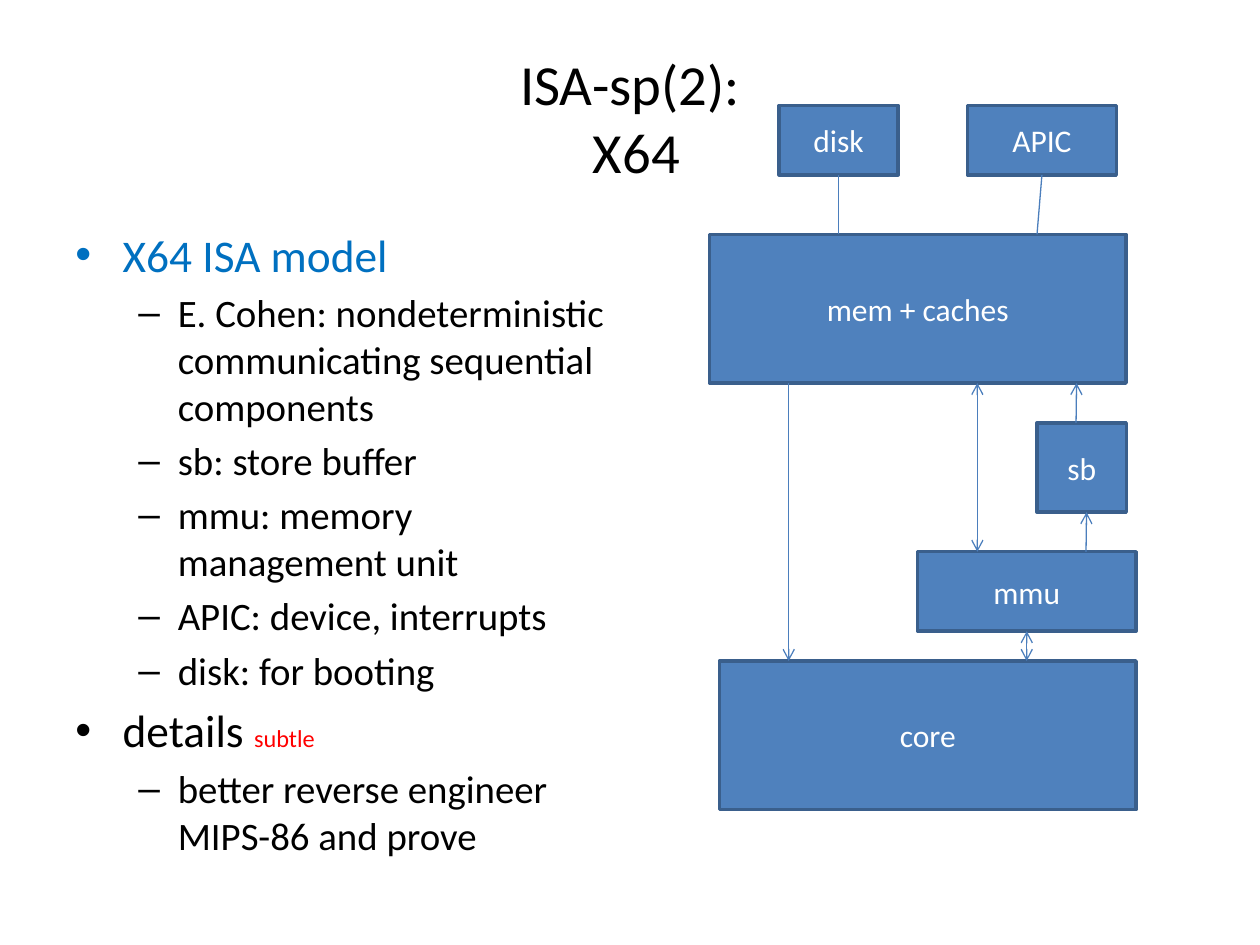
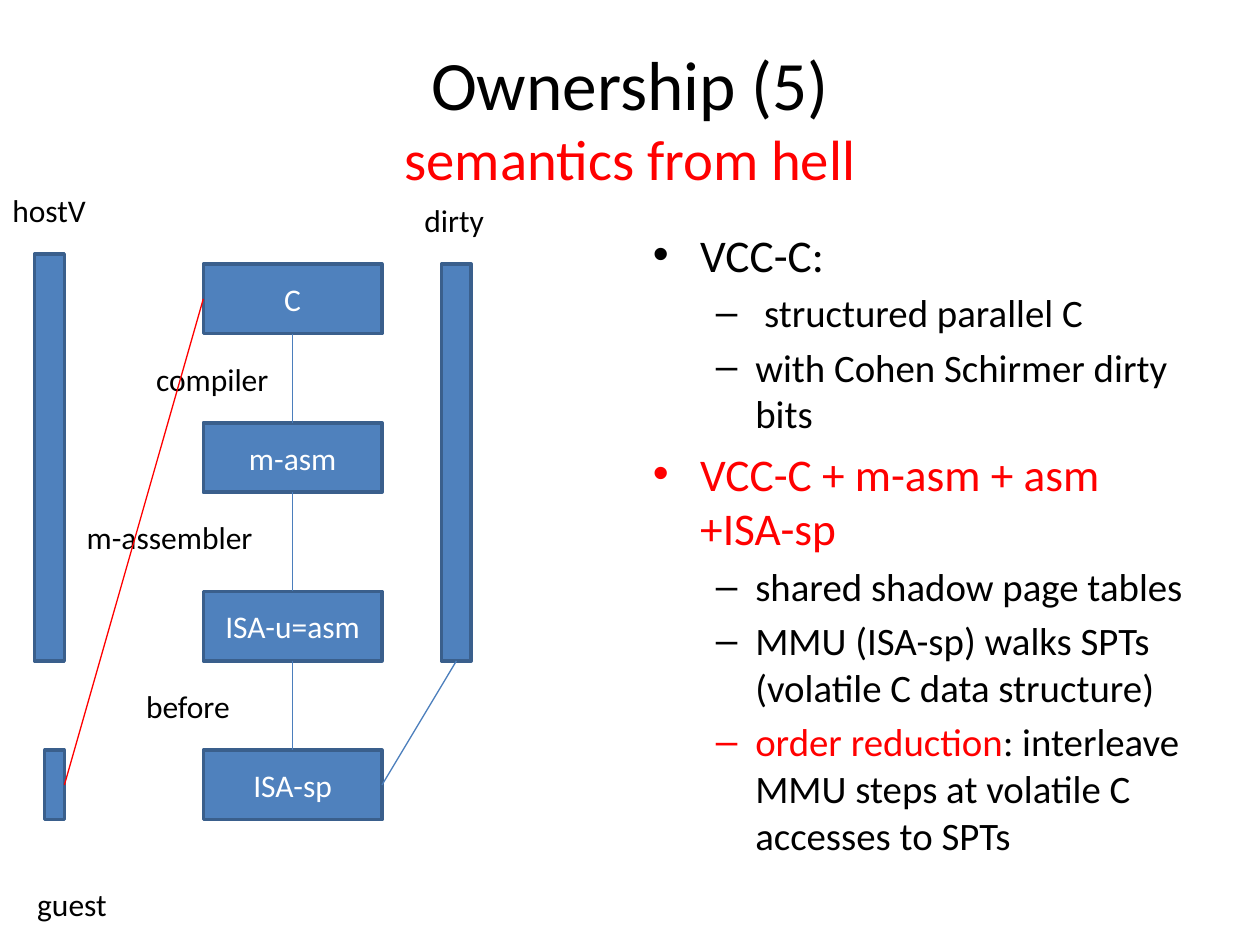
"""Build two slides on a processor model and on ownership semantics."""
from pptx import Presentation
from pptx.dml.color import RGBColor
from pptx.enum import shapes, text
from pptx.oxml.ns import qn
from pptx.util import Pt
from lxml import etree

FONT = "Calibri"
BLACK, WHITE, RED, BLUE = "000000", "FFFFFF", "FF0000", "0070C0"
BOX_FILL, BOX_LINE, LINK = "4F81BD", "3A5F8C", "4B7EBC"
TOP, LEFT, BOTTOM, RIGHT = range(4)
LEVELS = [("•", 25.9, 27, -27, 5.3), ("–", 22.2, 58.5, -22.5, 4.45)]


def colour(hex_code):
    return RGBColor.from_string(hex_code)


def add_run(paragraph, wording, size, hex_code=BLACK):
    run = paragraph.add_run()
    run.text = wording
    run.font.name = FONT
    run.font.size = Pt(size)
    run.font.color.rgb = colour(hex_code)


processor = {
    "title": [("ISA-sp(2):", 32.4, BLACK), (" X64", 32.4, BLACK)],
    "body_left": 36,
    "body": [
        (0, [("X64 ISA model", BLUE)]),
        (1, [("E. Cohen: nondeterministic communicating sequential components", BLACK)]),
        (1, [("sb: store buffer", BLACK)]),
        (1, [("mmu: memory management unit", BLACK)]),
        (1, [("APIC: device, interrupts", BLACK)]),
        (1, [("disk: for booting", BLACK)]),
        (0, [("details ", BLACK), ("subtle", RED, 13.9)]),
        (1, [("better reverse engineer MIPS-86 and prove", BLACK)]),
    ],
    "boxes": {
        "mem + caches": (405.4, 133.9, 238.1, 85),
        "sb": (592.6, 241.6, 51, 51.1),
        "core": (411.1, 377.7, 238.1, 85),
        "mmu": (524.3, 315.3, 124.9, 45.4),
        "APIC": (552.9, 60.2, 85, 39.7),
        "disk": (445.2, 60.2, 68, 39.7),
    },
    "bars": {},
    "labels": [],
    "links": [
        (("core", TOP, 586.7), ("mmu", BOTTOM), LINK, ("headEnd", "tailEnd")),
        (("mmu", TOP, 558.5), ("mem + caches", BOTTOM, 558.5), LINK, ("headEnd", "tailEnd")),
        (("mmu", TOP, 620.6), ("sb", BOTTOM, 620.9), LINK, ("tailEnd",)),
        (("sb", TOP, 614.9), ("mem + caches", BOTTOM, 615.2), LINK, ("tailEnd",)),
        (("mem + caches", BOTTOM, 450.7), ("core", TOP, 450.7), LINK, ("tailEnd",)),
        (("APIC", BOTTOM), ("mem + caches", TOP, 592.6), LINK, ()),
        (("disk", BOTTOM), ("mem + caches", TOP, 479.2), LINK, ()),
    ],
}

stack = {"C": 150.9, "m-asm": 241.6, "ISA-u=asm": 338, "ISA-sp": 428.7}
layers = list(stack)
ownership = {
    "title": [("Ownership (5)", 39.6, BLACK), ("semantics from hell", 32.4, RED)],
    "body_left": 366,
    "body": [
        (0, [("VCC-C:", BLACK)]),
        (1, [(" structured parallel C", BLACK)]),
        (1, [("with Cohen Schirmer dirty bits", BLACK)]),
        (0, [("VCC-C + m-asm + asm +ISA-sp", RED)]),
        (1, [("shared shadow page tables", BLACK)]),
        (1, [("MMU (ISA-sp) walks SPTs (volatile C data structure)", BLACK)]),
        (1, [("order reduction", RED),
             (": interleave MMU steps at volatile C accesses to SPTs", BLACK)]),
    ],
    "boxes": {layer: (116.2, top, 102.1, 39.7) for layer, top in stack.items()},
    "bars": {
        "dirty bar": (252.3, 150.9, 17, 226.8),
        "host bar": (19.8, 145.2, 17, 232.5),
        "guest bar": (25.5, 428.7, 11.3, 39.7),
    },
    "labels": [
        ("compiler", 82.1, 202.3, 79.2),
        ("m-assembler", 42.5, 292.3, 110.2),
        ("before", 76.4, 388.8, 62.6),
        ("dirty", 235.4, 111.3, 49),
        ("hostV", 0, 105.8, 67.7),
        ("guest", 14.2, 502.3, 54.7),
    ],
    "links": [
        *[((upper, BOTTOM), (lower, TOP), LINK, ()) for upper, lower in zip(layers, layers[1:])],
        (("dirty bar", BOTTOM), ("ISA-sp", RIGHT), LINK, ()),
        (("C", LEFT), ("guest bar", RIGHT), RED, ()),
    ],
}

presentation = Presentation()
presentation.slide_width, presentation.slide_height = Pt(720), Pt(540)

for content in (processor, ownership):
    slide = presentation.slides.add_slide(presentation.slide_layouts[5])
    title = slide.shapes.title
    title.left, title.top, title.width, title.height = Pt(36), Pt(21.6), Pt(648), Pt(90)
    title.text_frame.auto_size = text.MSO_AUTO_SIZE.NONE
    title.text_frame.vertical_anchor = text.MSO_ANCHOR.MIDDLE
    paragraph = title.text_frame.paragraphs[0]
    paragraph.alignment = text.PP_ALIGN.CENTER
    for index, (wording, size, hex_code) in enumerate(content["title"]):
        if index:
            paragraph.add_line_break()
        add_run(paragraph, wording, size, hex_code)

    body = slide.shapes.add_textbox(Pt(content["body_left"]), Pt(126), Pt(318.2), Pt(356.4))
    body.text_frame.word_wrap = True
    for index, (level, runs) in enumerate(content["body"]):
        paragraph = body.text_frame.add_paragraph() if index else body.text_frame.paragraphs[0]
        bullet, level_size, margin, indent, gap = LEVELS[level]
        paragraph.level = level
        paragraph.space_before = Pt(gap)
        properties = paragraph._p.get_or_add_pPr()
        properties.set("marL", str(Pt(margin)))
        properties.set("indent", str(Pt(indent)))
        etree.SubElement(properties, qn("a:buFont"), typeface="Arial")
        etree.SubElement(properties, qn("a:buChar"), char=bullet)
        for wording, hex_code, *size in runs:
            add_run(paragraph, wording, size[0] if size else level_size, hex_code)

    rectangles = {}
    for name, place in {**content["boxes"], **content["bars"]}.items():
        shape = slide.shapes.add_shape(shapes.MSO_SHAPE.RECTANGLE, *map(Pt, place))
        shape.shadow.inherit = False
        shape.fill.solid()
        shape.fill.fore_color.rgb = colour(BOX_FILL)
        shape.line.color.rgb = colour(BOX_LINE)
        shape.line.width = Pt(2)
        rectangles[name] = shape
        if name in content["boxes"]:
            shape.text_frame.vertical_anchor = text.MSO_ANCHOR.MIDDLE
            paragraph = shape.text_frame.paragraphs[0]
            paragraph.alignment = text.PP_ALIGN.CENTER
            add_run(paragraph, name, 18, WHITE)

    for wording, left, top, width in content["labels"]:
        label = slide.shapes.add_textbox(Pt(left), Pt(top), Pt(width), Pt(29))
        label.text_frame.word_wrap = False
        label.text_frame.auto_size = text.MSO_AUTO_SIZE.SHAPE_TO_FIT_TEXT
        add_run(label.text_frame.paragraphs[0], wording, 18)

    for start, end, hex_code, arrows in content["links"]:
        points = []
        for name, side, *across in (start, end):
            shape = rectangles[name]
            edge = shape.top + (shape.height if side == BOTTOM else 0)
            points += [Pt(across[0]) if across else shape.left, edge]
        connector = slide.shapes.add_connector(shapes.MSO_CONNECTOR.STRAIGHT, *points)
        for join, (name, side, *across) in ((connector.begin_connect, start),
                                            (connector.end_connect, end)):
            if not across:
                join(rectangles[name], side)
        connector.line.color.rgb = colour(hex_code)
        connector.line.width = Pt(0.75)
        for arrow in arrows:
            etree.SubElement(connector.line._get_or_add_ln(), qn("a:" + arrow), type="arrow")
        etree.SubElement(connector._element.spPr, qn("a:effectLst"))

presentation.save("out.pptx")
